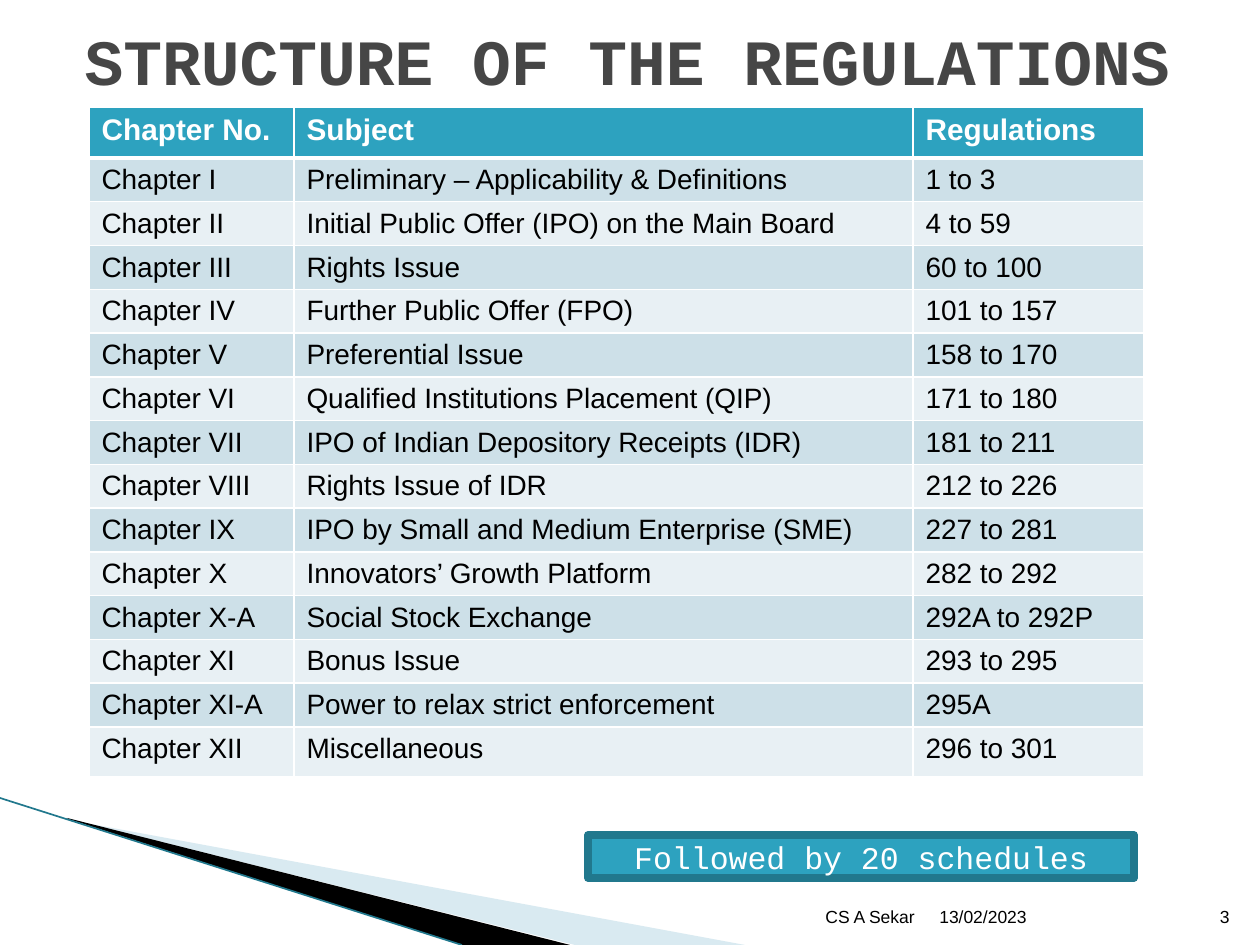
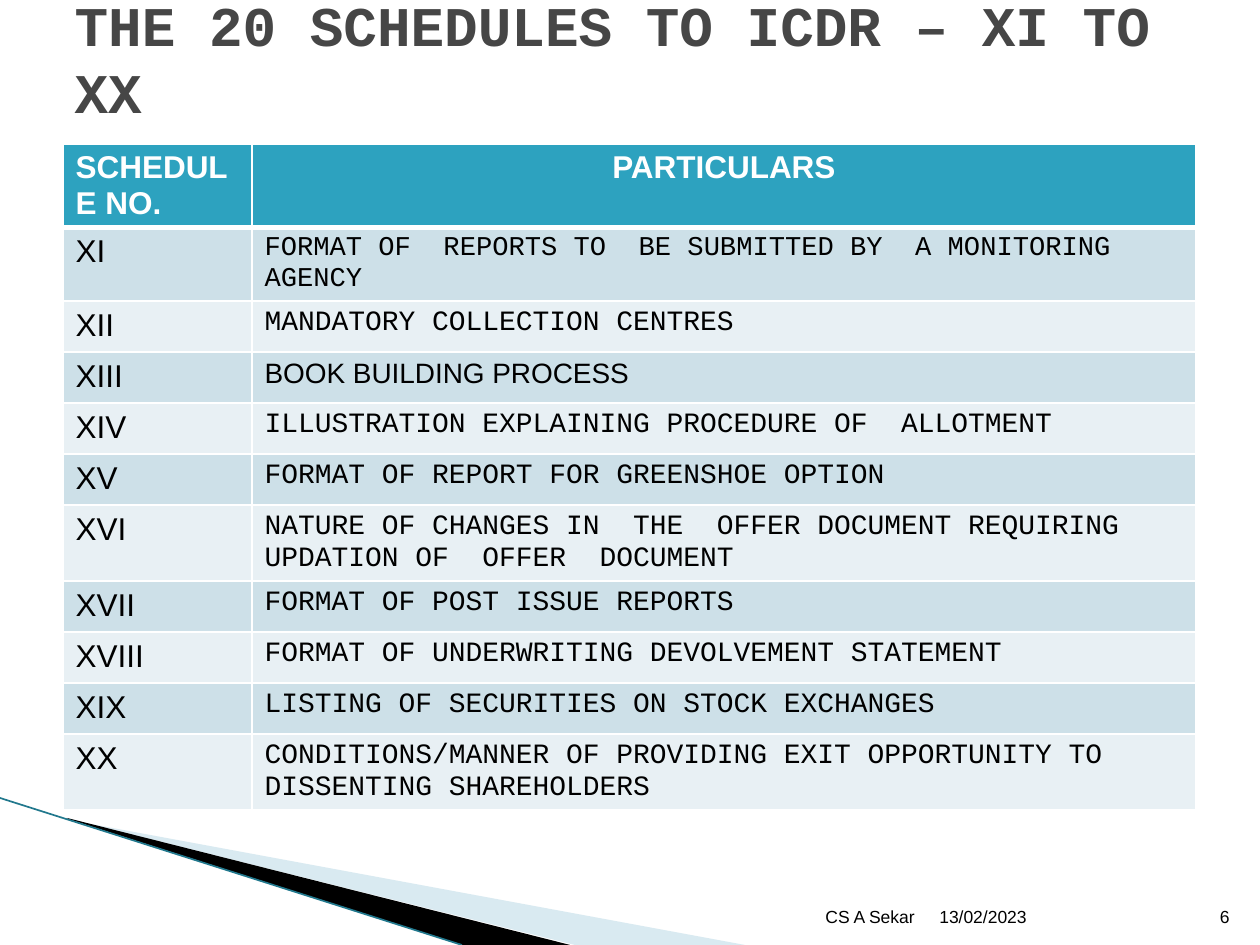
from lxml import etree
from pptx import Presentation
from pptx.dml.color import RGBColor
from pptx.enum import shapes, text
from pptx.oxml import ns
from pptx.util import Emu, Pt

SCALE = 914400 / 126
WIDE, HIGH = 1260, 945

TEAL = RGBColor(0x2D, 0xA2, 0xBF)
DEEP = RGBColor(0x21, 0x78, 0x8D)
PALE = RGBColor(0xA0, 0xCB, 0xDC)
BANDS = [RGBColor(0xCD, 0xE0, 0xE8), RGBColor(0xE8, 0xF0, 0xF4)]
GREY = RGBColor(0x46, 0x46, 0x46)
BLACK = RGBColor(0, 0, 0)
WHITE = RGBColor(0xFF, 0xFF, 0xFF)

SANS, MONO = "Arial", "Courier New"
LEFT, MID, RIGHT = text.PP_ALIGN.LEFT, text.PP_ALIGN.CENTER, text.PP_ALIGN.RIGHT

CHAPTERS = [
    ("Chapter No.", "Subject", "Regulations"),
    ("Chapter I", "Preliminary – Applicability & Definitions", "1 to 3"),
    ("Chapter II", "Initial Public Offer (IPO) on the Main Board", "4 to 59"),
    ("Chapter III", "Rights Issue", "60 to 100"),
    ("Chapter IV", "Further Public Offer (FPO)", "101 to 157"),
    ("Chapter V", "Preferential Issue", "158 to 170"),
    ("Chapter VI", "Qualified Institutions Placement (QIP)", "171 to 180"),
    ("Chapter VII", "IPO of Indian Depository Receipts (IDR)", "181 to 211"),
    ("Chapter VIII", "Rights Issue of IDR", "212 to 226"),
    ("Chapter IX", "IPO by Small and Medium Enterprise (SME)", "227 to 281"),
    ("Chapter X", "Innovators’ Growth Platform", "282 to 292"),
    ("Chapter X-A", "Social Stock Exchange", "292A to 292P"),
    ("Chapter XI", "Bonus Issue", "293 to 295"),
    ("Chapter XI-A", "Power to relax strict enforcement", "295A"),
    ("Chapter XII", "Miscellaneous", "296 to 301"),
]

SCHEDULES = [
    ("SCHEDULE NO.", "PARTICULARS"),
    ("XI", "FORMAT OF  REPORTS TO  BE SUBMITTED BY  A MONITORING AGENCY"),
    ("XII", "MANDATORY COLLECTION CENTRES"),
    ("XIII", "BOOK BUILDING PROCESS"),
    ("XIV", "ILLUSTRATION EXPLAINING PROCEDURE OF  ALLOTMENT"),
    ("XV", "FORMAT OF REPORT FOR GREENSHOE OPTION"),
    ("XVI", "NATURE OF CHANGES IN  THE  OFFER DOCUMENT REQUIRING UPDATION OF  OFFER  DOCUMENT"),
    ("XVII", "FORMAT OF POST ISSUE REPORTS"),
    ("XVIII", "FORMAT OF UNDERWRITING DEVOLVEMENT STATEMENT"),
    ("XIX", "LISTING OF SECURITIES ON STOCK EXCHANGES"),
    ("XX", "CONDITIONS/MANNER OF PROVIDING EXIT OPPORTUNITY TO DISSENTING SHAREHOLDERS"),
]


def px(n):
    return Emu(round(n * SCALE))


def place(shape, box):
    shape.left, shape.top, shape.width, shape.height = map(px, box)


def style(frame, size, face, color, bold=False, align=LEFT):
    for para in frame.paragraphs:
        para.alignment = align
        for run in para.runs:
            font = run.font
            font.size, font.name, font.bold = Pt(size), face, bold
            font.color.rgb = color


def reframe(shape, points, box):
    left, top, width, height = box
    route = shape._element.find(".//" + ns.qn("a:path"))
    route.set("w", str(width))
    route.set("h", str(height))
    for spot, (x, y) in zip(route.iter(ns.qn("a:pt")), points):
        spot.set("x", str(x - left))
        spot.set("y", str(y - top))
    place(shape, box)


def wedge(slide, points, box, color, alpha=None):
    pen = slide.shapes.build_freeform(*points[0], scale=SCALE)
    pen.add_line_segments(points[1:])
    shape = pen.convert_to_shape()
    reframe(shape, points, box)
    shape.shadow.inherit = False
    shape.fill.solid()
    shape.fill.fore_color.rgb = color
    shape.line.fill.background()
    if alpha:
        tint = shape.fill._xPr.find(".//" + ns.qn("a:srgbClr"))
        etree.SubElement(tint, ns.qn("a:alpha"), val=str(alpha * 1000))


def sweep(slide):
    wedge(slide, [(69, 820), (745, 945), (575, 945), (69, 819)],
          (98, 689, 524, 199), PALE, 40)
    wedge(slide, [(67, 818), (570, 945), (462, 945), (68, 819)],
          (-8, 798, 524, 116), BLACK)
    line = slide.shapes.add_connector(
        shapes.MSO_CONNECTOR.STRAIGHT, px(0), px(798), px(462), px(945))
    line.line.color.rgb = DEEP
    line.line.width = Pt(0.95)
    etree.SubElement(line._element.spPr, ns.qn("a:effectLst"))


def title(slide, words, box, size):
    shape = slide.shapes.title
    place(shape, box)
    frame = shape.text_frame
    frame.text = words
    frame.word_wrap = True
    frame.auto_size = text.MSO_AUTO_SIZE.NONE
    frame.vertical_anchor = text.MSO_ANCHOR.MIDDLE
    style(frame, size, MONO, GREY, True)


def note(slide, words, left, width, align):
    frame = slide.shapes.add_textbox(px(left), px(883), px(width), px(50)).text_frame
    frame.text = words
    frame.word_wrap = True
    frame.vertical_anchor = text.MSO_ANCHOR.BOTTOM
    style(frame, 10, SANS, BLACK, align=align)


def footer(slide, number):
    note(slide, "CS A Sekar", 603, 324, RIGHT)
    note(slide, "13/02/2023", 927, 265, LEFT)
    note(slide, str(number), 1192, 50, RIGHT)


def edges(cell, base):
    props = cell._tc.get_or_add_tcPr()
    for spot, (side, width) in enumerate(zip("LRTB", (1, 1, 1, base))):
        line = etree.Element(ns.qn("a:ln" + side), w=str(Pt(width)))
        fill = etree.SubElement(line, ns.qn("a:solidFill"))
        etree.SubElement(fill, ns.qn("a:srgbClr"), val=str(WHITE))
        props.insert(spot, line)


def grid(slide, data, left, top, cols, rows):
    table = slide.shapes.add_table(
        len(rows), len(cols), px(left), px(top), px(sum(cols)), px(sum(rows))).table
    for col, width in zip(table.columns, cols):
        col.width = px(width)
    for r, (row, height) in enumerate(zip(table.rows, rows)):
        row.height = px(height)
        for cell, words in zip(row.cells, data[r]):
            cell.text = words
            cell.fill.solid()
            cell.fill.fore_color.rgb = BANDS[(r + 1) % 2] if r else TEAL
            edges(cell, 1 if r else 3)
    return table


def callout(slide, words):
    shape = slide.shapes.add_shape(
        shapes.MSO_SHAPE.RECTANGLE, px(588), px(835), px(546), px(43))
    shape.shadow.inherit = False
    shape.fill.solid()
    shape.fill.fore_color.rgb = TEAL
    shape.line.color.rgb = DEEP
    shape.line.width = Pt(4.33)
    etree.SubElement(shape.line._get_or_add_ln(), ns.qn("a:round"))
    frame = shape.text_frame
    frame.text = words
    frame.vertical_anchor = text.MSO_ANCHOR.MIDDLE
    style(frame, 18, MONO, WHITE, align=MID)


def chapters(slide):
    title(slide, "STRUCTURE OF THE REGULATIONS", (72, 21, 1134, 78), 36.9)
    rows = [51] + [43] * 13 + [50]
    table = grid(slide, CHAPTERS, 89, 107, [205, 619, 231], rows)
    for r, row in enumerate(table.rows):
        for cell in row.cells:
            if r:
                style(cell.text_frame, 16, SANS, BLACK)
            else:
                style(cell.text_frame, 17, SANS, WHITE, True)
    callout(slide, "Followed by 20 schedules")


def schedules(slide):
    title(slide, "THE 20 SCHEDULES TO ICDR – XI TO XX", (62, 14, 1134, 88), 32)
    rows = [83, 74, 51, 51, 51, 51, 76, 51, 51, 51, 75]
    table = grid(slide, SCHEDULES, 63, 144, [189, 944], rows)
    for r, row in enumerate(table.rows):
        code, topic = (cell.text_frame for cell in row.cells)
        if r:
            style(code, 18, SANS, BLACK)
            face = SANS if topic.text == "BOOK BUILDING PROCESS" else MONO
            style(topic, 15.5 if r == 1 else 16, face, BLACK)
        else:
            style(code, 18, SANS, WHITE, True)
            style(topic, 18, SANS, WHITE, True, MID)


def main():
    deck = Presentation()
    deck.slide_width, deck.slide_height = px(WIDE), px(HIGH)
    for number, build in ((3, chapters), (6, schedules)):
        slide = deck.slides.add_slide(deck.slide_layouts[5])
        sweep(slide)
        build(slide)
        footer(slide, number)
    deck.save("out.pptx")


if __name__ == "__main__":
    main()
